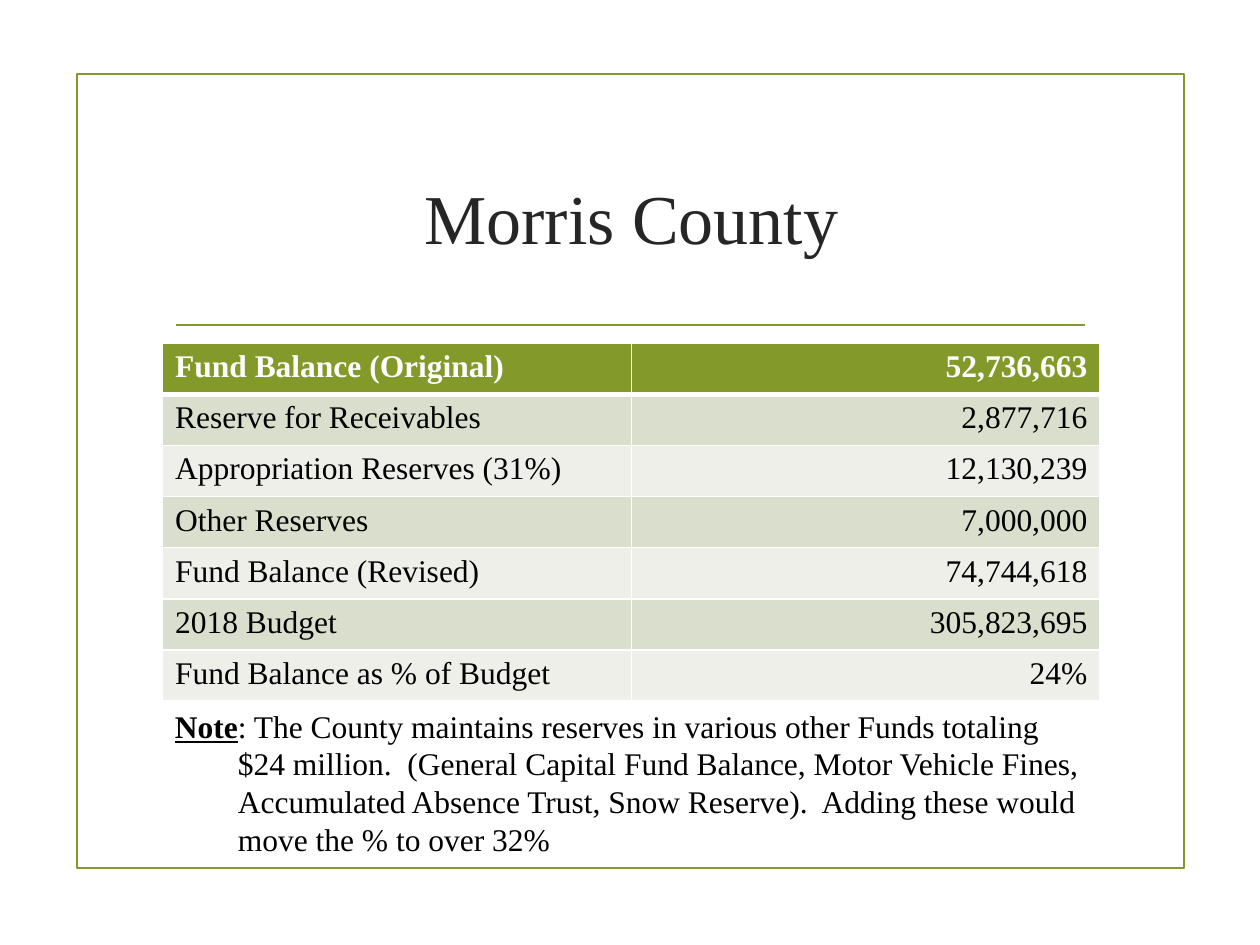
from typing import NamedTuple

from lxml.etree import SubElement as Sub
from pptx import Presentation
from pptx.dml.color import RGBColor as Rgb
from pptx.enum.shapes import MSO_CONNECTOR as Link, MSO_SHAPE as Form
from pptx.enum.text import MSO_ANCHOR as Anchor, PP_ALIGN as Align
from pptx.oxml.ns import qn
from pptx.util import Pt

HUES = {
    "green": "83992A",
    "title": "262626",
    "text": "000000",
    "white": "FFFFFF",
    "odd": "D9DECD",
    "even": "EDEFE8",
}
FACE = "Times New Roman"


class Box(NamedTuple):
    left: float
    top: float
    width: float
    height: float

    def lengths(self) -> list:
        return [Pt(n) for n in self]


class Item(NamedTuple):
    label: str
    value: str


FRAME = Box(43.9, 42.5, 632.9, 453.6)
TITLE = Box(92.9, 72, 535.7, 103)
GRID = Box(92.9, 196.2, 535.7, 204.4)
NOTE = Box(92.9, 400.3, 535.7, 94.5)
RULE = (100.8, 185.8, 619.9, 185.8)

ITEMS = [
    Item("Fund Balance (Original)", "52,736,663"),
    Item("Reserve for Receivables", "2,877,716"),
    Item("Appropriation Reserves (31%)", "12,130,239"),
    Item("Other Reserves", "7,000,000"),
    Item("Fund Balance (Revised)", "74,744,618"),
    Item("2018 Budget", "305,823,695"),
    Item("Fund Balance as % of Budget", "24%"),
]
LINES = [
    ": The County maintains reserves in various other Funds totaling",
    "$24 million.  (General Capital Fund Balance, Motor Vehicle Fines,",
    "Accumulated Absence Trust, Snow Reserve).  Adding these would",
    "move the % to over 32%",
]


def hue(name: str) -> Rgb:
    return Rgb.from_string(HUES[name])


def write(para, text: str, size: float = 18, tint: str = "text", **more) -> None:
    run = para.add_run()
    run.text = text
    run.font.color.rgb = hue(tint)
    style = {"name": FACE, "size": Pt(size), "bold": False, **more}
    for key, value in style.items():
        setattr(run.font, key, value)


def add_text(slide, box: Box, anchor):
    frame = slide.shapes.add_textbox(*box.lengths()).text_frame
    frame.word_wrap = True
    frame.vertical_anchor = anchor
    return frame


def stroke(line) -> None:
    line.color.rgb = hue("green")
    line.width = Pt(1.25)


def edge(cell, side: str, width: float) -> None:
    line = Sub(cell._tc.get_or_add_tcPr(), qn(f"a:ln{side}"), w=str(Pt(width)))
    fill = Sub(line, qn("a:solidFill"))
    Sub(fill, qn("a:srgbClr"), val=HUES["white"])


def fill_cell(cell, text: str, row: int, align) -> None:
    head = row == 0
    # Borders come before the fill in the cell's XML
    widths = {"L": 1, "R": 1, "T": 3 if row == 1 else 1, "B": 3 if head else 1}
    for side, width in widths.items():
        edge(cell, side, width)
    cell.fill.solid()
    cell.fill.fore_color.rgb = hue("green" if head else "odd" if row % 2 else "even")
    para = cell.text_frame.paragraphs[0]
    para.alignment = align
    write(para, text, tint="white" if head else "text", bold=head)


def add_grid(slide, box: Box, items: list[Item]) -> None:
    table = slide.shapes.add_table(len(items), 2, *box.lengths()).table
    for line in table.rows:
        line.height = Pt(box.height / len(items))
    for row, item in enumerate(items):
        for col, align in enumerate((Align.LEFT, Align.RIGHT)):
            fill_cell(table.cell(row, col), item[col], row, align)


def main() -> None:
    deck = Presentation()
    deck.slide_width, deck.slide_height = Pt(720), Pt(540)
    slide = deck.slides.add_slide(deck.slide_layouts[6])

    # Frame and rule under the title
    frame = slide.shapes.add_shape(Form.RECTANGLE, *FRAME.lengths())
    frame.shadow.inherit = False
    frame.fill.background()
    stroke(frame.line)
    rule = slide.shapes.add_connector(Link.STRAIGHT, *[Pt(n) for n in RULE])
    Sub(rule._element.spPr, qn("a:effectLst"))
    stroke(rule.line)

    # Title
    para = add_text(slide, TITLE, Anchor.MIDDLE).paragraphs[0]
    para.alignment = Align.CENTER
    write(para, "Morris County", 40, "title")

    # Fund balance table
    add_grid(slide, GRID, ITEMS)

    # Note, with every line after the first indented
    note = add_text(slide, NOTE, Anchor.TOP)
    for i, line in enumerate(LINES):
        para = note.add_paragraph() if i else note.paragraphs[0]
        if i:
            para._p.get_or_add_pPr().set("marL", str(Pt(36)))
        else:
            write(para, "Note", bold=True, underline=True)
        write(para, line)

    deck.save("out.pptx")


if __name__ == "__main__":
    main()
